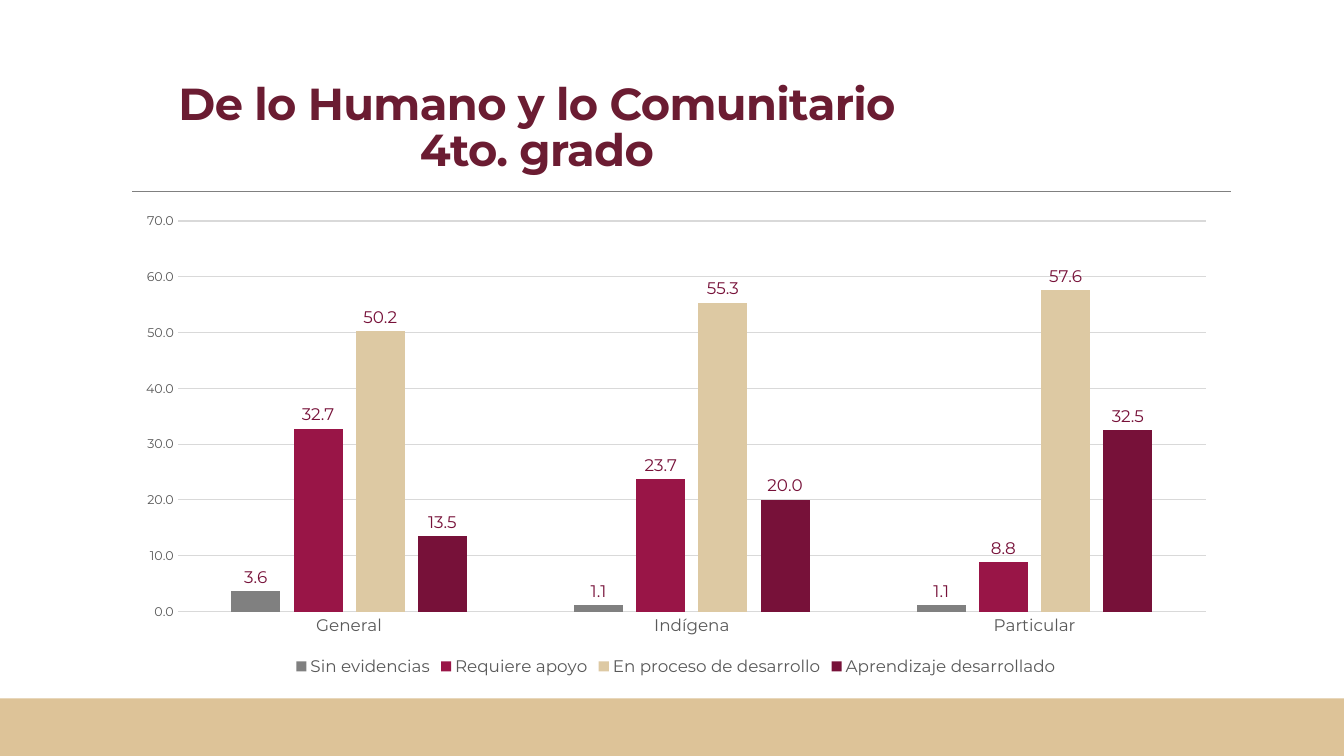
from lxml import etree
from pptx import Presentation
from pptx.chart.data import CategoryChartData
from pptx.dml.color import RGBColor
from pptx.enum.chart import XL_CHART_TYPE, XL_LABEL_POSITION, XL_LEGEND_POSITION, XL_TICK_MARK
from pptx.enum.shapes import MSO_CONNECTOR, MSO_SHAPE
from pptx.enum.text import MSO_ANCHOR, MSO_AUTO_SIZE, PP_ALIGN
from pptx.oxml.ns import qn
from pptx.util import Inches, Pt

COLUMNS = XL_CHART_TYPE.COLUMN_CLUSTERED
OUTSIDE = XL_LABEL_POSITION.OUTSIDE_END
BOTTOM = XL_LEGEND_POSITION.BOTTOM
NO_TICK = XL_TICK_MARK.NONE
STRAIGHT = MSO_CONNECTOR.STRAIGHT
RECT = MSO_SHAPE.RECTANGLE
MIDDLE = MSO_ANCHOR.MIDDLE
NO_FIT = MSO_AUTO_SIZE.NONE
CENTER = PP_ALIGN.CENTER

# Content
TITLE = "De lo Humano y lo Comunitario\v4to. grado"
GROUPS = ["General", "Indígena", "Particular"]
LEVELS = [
    ("Sin evidencias", "808080", (3.6, 1.1, 1.1)),
    ("Requiere apoyo", "991547", (32.7, 23.7, 8.8)),
    ("En proceso de desarrollo", "DDC9A3", (50.2, 55.3, 57.6)),
    ("Aprendizaje desarrollado", "771139", (13.5, 20.0, 32.5)),
]
FONT = "Montserrat"
WINE, LABEL, GRAY, GRID, RULE, SAND = "6B1C32", "771139", "595959", "D9D9D9", "808080", "DDC398"
FORMAT = "0.0"

# Layout in inches
WIDE, HIGH = 13.33, 7.5
TITLE_BOX = (1, 0.76, 8.65, 1.06)
CHART_BOX = (1.23, 2.02, 10.95, 4.73)
RULE_LEFT, RULE_RIGHT, RULE_TOP = 1.31, 12.21, 1.9
BAND = 0.57


def color(code):
    return RGBColor.from_string(code)


def style(font, size, code, bold=False):
    font.name = FONT
    font.size = Pt(size)
    font.bold = bold
    font.color.rgb = color(code)


def stroke(line, code, width):
    line.color.rgb = color(code)
    line.width = Pt(width)


def box(sizes):
    return [Inches(size) for size in sizes]


def add_frame(slide):
    # Bottom band
    band = slide.shapes.add_shape(RECT, *box((0, HIGH - BAND, WIDE, BAND)))
    band.shadow.inherit = False
    band.fill.solid()
    band.fill.fore_color.rgb = color(SAND)
    band.line.fill.background()

    # Rule under the title
    rule = slide.shapes.add_connector(
        STRAIGHT, *box((RULE_LEFT, RULE_TOP, RULE_RIGHT, RULE_TOP)))
    stroke(rule.line, RULE, 0.5)
    etree.SubElement(rule._element.spPr, qn("a:effectLst"))


def add_title(slide):
    title = slide.shapes.title
    title.left, title.top, title.width, title.height = box(TITLE_BOX)
    frame = title.text_frame
    frame.text = TITLE
    frame.word_wrap = True
    frame.auto_size = NO_FIT
    frame.vertical_anchor = MIDDLE
    head = frame.paragraphs[0]
    head.alignment = CENTER
    head.line_spacing = 0.85
    for run in head.runs:
        style(run.font, 32, WINE, True)
        run.font._element.set("spc", "-50")


def add_bars(slide):
    data = CategoryChartData(number_format=FORMAT)
    data.categories = GROUPS
    for name, _, values in LEVELS:
        data.add_series(name, values)
    chart = slide.shapes.add_chart(COLUMNS, *box(CHART_BOX), data).chart
    style(chart.font, 12, "000000")
    chart.has_title = False

    # Bars and their labels
    plot = chart.plots[0]
    plot.gap_width = 219
    plot.overlap = -27
    plot.vary_by_categories = False
    for bars, (_, code, _) in zip(plot.series, LEVELS):
        bars.format.fill.solid()
        bars.format.fill.fore_color.rgb = color(code)
        bars.invert_if_negative = False
        labels = bars.data_labels
        labels.show_value = True
        labels.position = OUTSIDE
        labels.number_format = FORMAT
        labels.number_format_is_linked = False
        style(labels.font, 12, LABEL)

    # Axes
    for axis, size in ((chart.category_axis, 12), (chart.value_axis, 9)):
        axis.major_tick_mark = axis.minor_tick_mark = NO_TICK
        style(axis.tick_labels.font, size, GRAY)
    stroke(chart.category_axis.format.line, GRID, 0.75)
    scale = chart.value_axis
    scale.minimum_scale, scale.maximum_scale, scale.major_unit = 0, 70, 10
    scale.format.line.fill.background()
    scale.has_major_gridlines = True
    stroke(scale.major_gridlines.format.line, GRID, 0.75)
    scale.tick_labels.number_format = FORMAT
    scale.tick_labels.number_format_is_linked = False

    # Legend
    chart.has_legend = True
    chart.legend.position = BOTTOM
    chart.legend.include_in_layout = False
    style(chart.legend.font, 12, GRAY)


def main():
    deck = Presentation()
    deck.slide_width, deck.slide_height = box((WIDE, HIGH))
    slide = deck.slides.add_slide(deck.slide_layouts[5])
    add_frame(slide)
    add_title(slide)
    add_bars(slide)
    deck.save("out.pptx")


if __name__ == "__main__":
    main()
